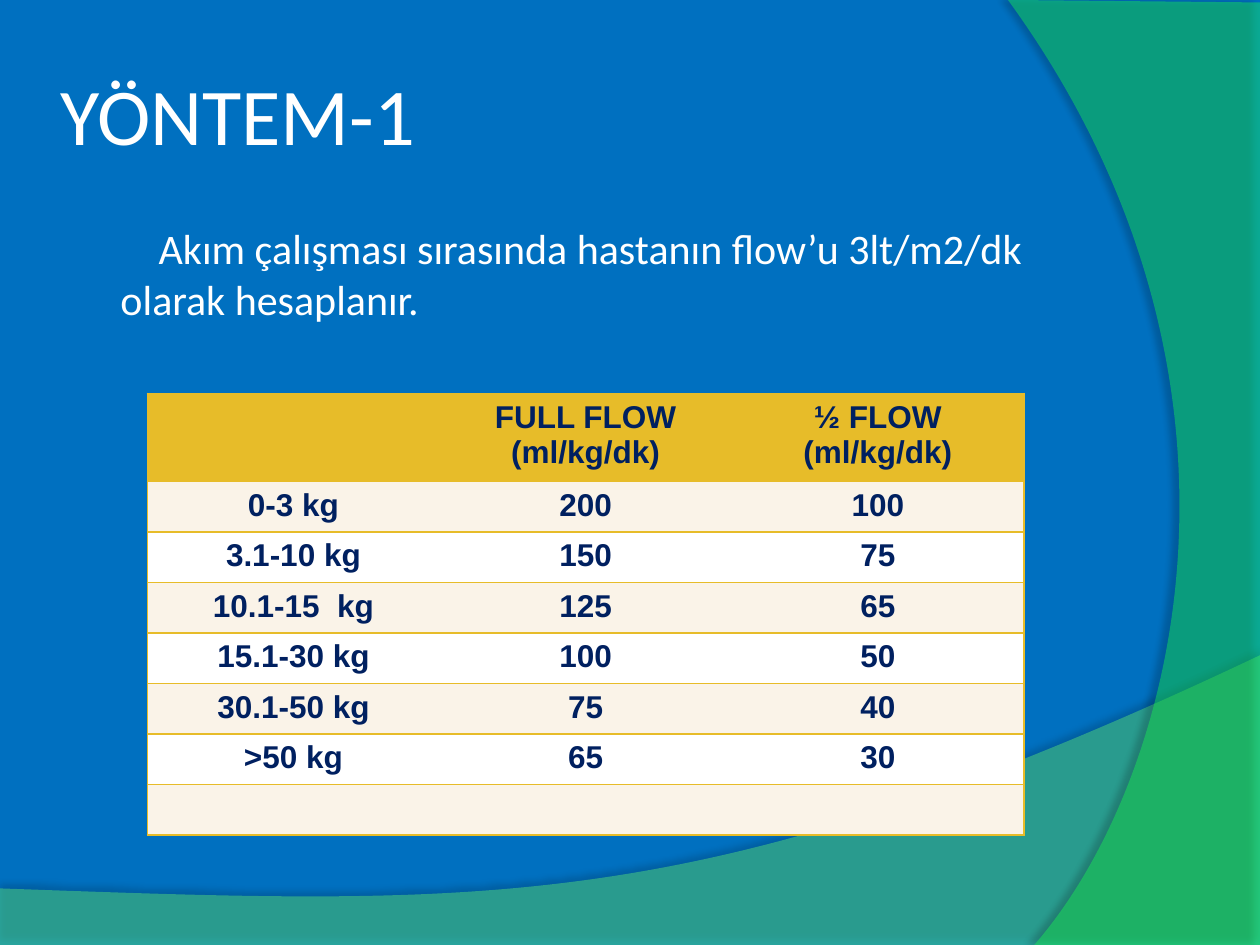
"""Build the YÖNTEM-1 slide with its flow table."""
from lxml.etree import SubElement
from pptx import Presentation
from pptx.dml.color import RGBColor
from pptx.enum.text import MSO_ANCHOR, PP_ALIGN
from pptx.oxml.ns import qn
from pptx.util import Cm, Pt

LOOK = {
    "back": "0070C0", "gold": "E7BC29", "cream": "FAF3E8", "white": "FFFFFF",
    "title": {"size": Pt(46), "name": "Calibri", "color": "FFFFFF"},
    "body": {"size": Pt(24), "name": "Calibri", "color": "FFFFFF"},
    "cell": {"size": Pt(18), "name": "Arial", "bold": True, "color": "002060"},
}


def style(para, form):
    for run in para.runs:
        for key, val in form.items():
            if key == "color":
                run.font.color.rgb = RGBColor.from_string(val)
            else:
                setattr(run.font, key, val)


def bend(shape, pulls):
    last = shape._element.findall(".//" + qn("a:lnTo"))[-1]
    arc = SubElement(last.getparent(), qn("a:cubicBezTo"))
    for x, y in pulls:
        SubElement(arc, qn("a:pt"), x=str(Cm(x) - shape.left), y=str(Cm(y) - shape.top))
    arc.append(last[0])
    last.getparent().replace(last, arc)


deck = Presentation()
deck.slide_width, deck.slide_height = Cm(25.4), Cm(19.05)
slide = deck.slides.add_slide(deck.slide_layouts[6])
slide.background.fill.solid()
slide.background.fill.fore_color.rgb = RGBColor.from_string(LOOK["back"])

low = [(0, 19.05), (25.4, 19.05), (25.4, 13.21), (0, 17.91)]
side = [(25.4, 0.05), (25.4, 19.05), (20.85, 19.05), (20.32, 0)]
waves = [
    (low, [(14.2, 18.52), (9.93, 18.26)], "5CE679", 45, 35, 3.5, 270),
    (side, [(23.75, 15.72), (25.86, 7.62)], "19FF50", 40, 45, 4, 180),
]
for spots, pulls, color, solid, dark, dist, turn in waves:
    pen = slide.shapes.build_freeform(*(Cm(n) for n in spots[0]), scale=1.0)
    pen.add_line_segments([(Cm(x), Cm(y)) for x, y in spots[1:]], close=True)
    wave = pen.convert_to_shape()
    bend(wave, pulls)
    wave.line.fill.background()
    wave.fill.solid()
    wave.fill.fore_color.rgb = RGBColor.from_string(color)
    tint = wave._element.spPr.find(qn("a:solidFill"))[0]
    SubElement(tint, qn("a:alpha"), val=str(solid * 1000))
    wave.shadow.inherit = False
    glow = wave._element.spPr.find(qn("a:effectLst"))
    shade = SubElement(glow, qn("a:outerShdw"), blurRad=str(Pt(4)), dist=str(Pt(dist)),
                       dir=str(turn * 60000), algn="ctr", rotWithShape="0")
    ink = SubElement(shade, qn("a:srgbClr"), val="000000")
    SubElement(ink, qn("a:alpha"), val=str(dark * 1000))
    path_end = wave._element.find(".//" + qn("a:close"))
    path_end.getparent().append(path_end)

texts = [
    ("YÖNTEM-1", "title", (1.09, 0.41, 23.04, 3.76), 0.13, MSO_ANCHOR.MIDDLE, 0),
    ("Akım çalışması sırasında hastanın flow’u 3lt/m2/dk olarak hesaplanır.",
     "body", (2.18, 4.37, 19.46, 2.31), 0.25, MSO_ANCHOR.TOP, 0.77),
]
for words, kind, place, inset, anchor, indent in texts:
    frame = slide.shapes.add_textbox(*(Cm(n) for n in place)).text_frame
    form = {"word_wrap": True, "vertical_anchor": anchor, "text": words,
            "margin_left": Cm(inset), "margin_right": Cm(inset)}
    for key, val in form.items():
        setattr(frame, key, val)
    para = frame.paragraphs[0]
    para._p.get_or_add_pPr().set("indent", str(Cm(indent)))
    style(para, LOOK[kind])

rows = [
    ("", "FULL FLOW\n(ml/kg/dk)", "½ FLOW\n(ml/kg/dk)"),
    ("0-3 kg", "200", "100"),
    ("3.1-10 kg", "150", "75"),
    ("10.1-15  kg", "125", "65"),
    ("15.1-30 kg", "100", "50"),
    ("30.1-50 kg", "75", "40"),
    (">50 kg", "65", "30"),
    ("", "", ""),
]
holder = slide.shapes.add_table(len(rows), 3, Cm(2.97), Cm(7.93), Cm(17.67), Cm(8.89))
grid = holder.table
grid.first_row = grid.horz_banding = False
grid._tbl.tblPr.find(qn("a:tableStyleId")).text = "{2D5ABB26-0587-4C30-8999-92F81FD0307C}"
for r, row in enumerate(rows):
    grid.rows[r].height = Cm(0.76 if r else 1.35)
    fill = "gold" if r == 0 else "cream" if r % 2 else "white"
    for c, words in enumerate(row):
        cell = grid.cell(r, c)
        cell.text = words
        for para in cell.text_frame.paragraphs:
            para.alignment = PP_ALIGN.CENTER
            style(para, LOOK["cell"])
            if not words:
                mark = SubElement(para._p, qn("a:endParaRPr"), sz="1800", b="1")
                SubElement(mark, qn("a:latin"), typeface=LOOK["cell"]["name"])
        edges = {0: ["lnL"], 1: [], 2: ["lnR"]}[c] + ["lnT", "lnB"]
        for edge in edges:
            line = SubElement(cell._tc.get_or_add_tcPr(), qn("a:" + edge), w=str(Pt(1)))
            SubElement(SubElement(line, qn("a:solidFill")), qn("a:srgbClr"), val=LOOK["gold"])
        cell.fill.solid()
        cell.fill.fore_color.rgb = RGBColor.from_string(LOOK[fill])
holder.height = Cm(8.89)

deck.save("out.pptx")
